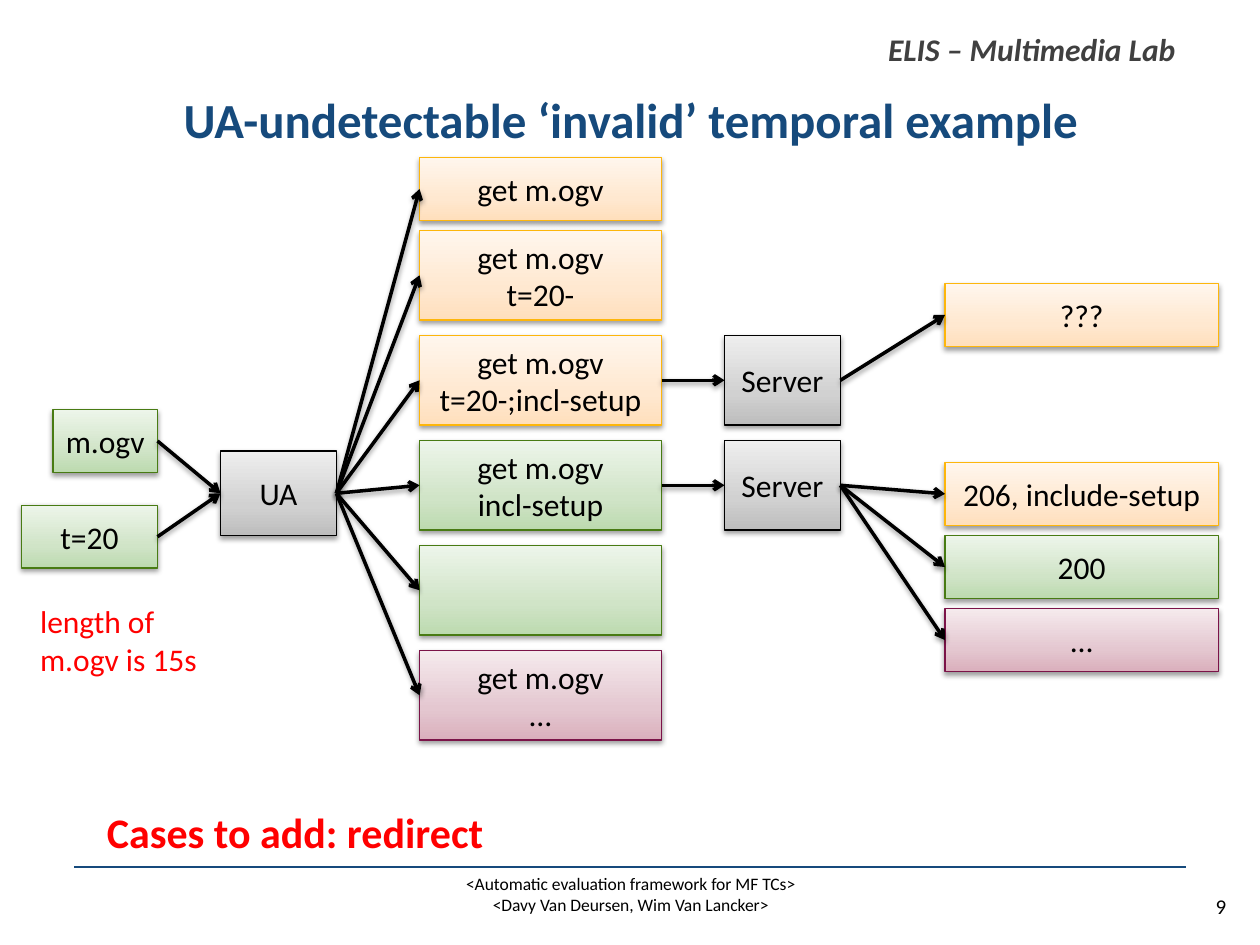
from copy import deepcopy

from lxml.etree import SubElement
from pptx import Presentation
from pptx.dml.color import RGBColor
from pptx.enum.shapes import MSO_CONNECTOR, MSO_SHAPE
from pptx.enum.text import MSO_ANCHOR, PP_ALIGN
from pptx.oxml.ns import qn
from pptx.util import Inches, Pt

BLACK = RGBColor(0x00, 0x00, 0x00)
BLUE = RGBColor(0x16, 0x4A, 0x7C)
GRAY = RGBColor(0x40, 0x40, 0x40)
RED = RGBColor(0xFF, 0x00, 0x00)

STOPS = (0, 0.35, 1)
STYLES = {
    "neutral": (BLACK, (RGBColor(0xBD, 0xBD, 0xBD), RGBColor(0xD1, 0xD1, 0xD1), RGBColor(0xEE, 0xEE, 0xEE))),
    "orange": (RGBColor(0xFD, 0xB6, 0x0C),
               (RGBColor(0xFF, 0xDF, 0xBC), RGBColor(0xFF, 0xE8, 0xD0), RGBColor(0xFF, 0xF6, 0xED))),
    "green": (RGBColor(0x48, 0x7B, 0x13),
              (RGBColor(0xBC, 0xDA, 0xAF), RGBColor(0xD0, 0xE4, 0xC7), RGBColor(0xED, 0xF5, 0xEA))),
    "purple": (RGBColor(0x7B, 0x13, 0x48),
               (RGBColor(0xDA, 0xAF, 0xBC), RGBColor(0xE4, 0xC7, 0xD0), RGBColor(0xF5, 0xEA, 0xED))),
}

LABELS = [
    ("9", (9.38, 7.04, 0.62, 0.3), 12, BLACK, PP_ALIGN.CENTER, False, False),
    ("ELIS – Multimedia Lab", (6.95, 0.19, 2.5, 0.4), 18, GRAY, PP_ALIGN.JUSTIFY, True, True),
    ("<Automatic evaluation framework for MF TCs>\n<Davy Van Deursen, Wim Van Lancker>",
     (0.59, 6.88, 8.83, 0.61), 10, BLACK, PP_ALIGN.CENTER, False, False),
    ("UA-undetectable ‘invalid’ temporal example",
     (0.55, 0.58, 8.91, 0.73), 28, BLUE, PP_ALIGN.CENTER, True, False),
    ("Cases to add: redirect", (0.75, 6.35, 7.71, 0.5), 24, RED, PP_ALIGN.LEFT, True, False),
    ("length of m.ogv is 15s", (0.22, 4.73, 1.5, 0.71), 18, RED, PP_ALIGN.LEFT, False, False),
]

LOW, HIGH = 0.5, 0.71
REQUEST_X, REQUEST_W = 3.33, 1.92
REQUEST_TOP, REQUEST_PITCH = 1.83, 2.5 / 3
SERVER_X, SERVER_W = 5.75, 0.92
RESPONSE_X, RESPONSE_W = 7.5, 2.17
RESPONSE_TOP, RESPONSE_PITCH = 3.67, 0.58

INPUTS = [("m.ogv", 0.42, 3.25, 0.83), ("t=20", 0.17, 4.01, 1.08)]
REQUESTS = [
    ("get m.ogv\nt=20-", "orange"),
    ("get m.ogv\nt=20-;incl-setup", "orange"),
    ("get m.ogv\nincl-setup", "green"),
    ("", "green"),
    ("get m.ogv\n…", "purple"),
]
RESPONSES = [("206, include-setup", "orange"), ("200", "green"), ("…", "purple")]

prs = Presentation()
prs.slide_width, prs.slide_height = Inches(10), Inches(7.5)
s = prs.slides.add_slide(prs.slide_layouts[6])


def write(tf, text, size, color, align, bold=False, italic=False):
    tf.text = text
    tf.vertical_anchor = MSO_ANCHOR.MIDDLE
    for p in tf.paragraphs:
        p.alignment = align
        for r in p.runs:
            r.font.name, r.font.size = "Calibri", Pt(size)
            r.font.bold, r.font.italic = bold, italic
            r.font.color.rgb = color


def add_shadow(shape):
    effects = SubElement(shape._element.spPr, qn("a:effectLst"))
    shadow = SubElement(effects, qn("a:outerShdw"), blurRad=str(Pt(3.1)), dist=str(Pt(1.6)),
                        dir="5400000", rotWithShape="0")
    color = SubElement(shadow, qn("a:srgbClr"), val="000000")
    SubElement(color, qn("a:alpha"), val="38000")


def add_box(text, style, x, y, w, h):
    sp = s.shapes.add_shape(MSO_SHAPE.RECTANGLE, Inches(x), Inches(y), Inches(w), Inches(h))
    border, shades = STYLES[style]
    sp.fill.gradient()
    sp.fill.gradient_angle = 90
    stop_list = sp._element.spPr.find(".//" + qn("a:gsLst"))
    stop_list.append(deepcopy(stop_list[0]))
    for stop, position, shade in zip(sp.fill.gradient_stops, STOPS, shades):
        stop.position = position
        stop.color.rgb = shade
    sp.line.color.rgb, sp.line.width = border, Pt(0.75)
    add_shadow(sp)
    if text:
        write(sp.text_frame, text, 18, BLACK, PP_ALIGN.CENTER)
    return sp


def add_arrow(start, end):
    c = s.shapes.add_connector(MSO_CONNECTOR.STRAIGHT, 0, 0, 0, 0)
    c.begin_connect(start, 3)
    c.end_connect(end, 1)
    c.line.color.rgb, c.line.width = BLACK, Pt(2)
    SubElement(c.line._get_or_add_ln(), qn("a:tailEnd"), type="arrow")
    add_shadow(c)


rule = s.shapes.add_connector(MSO_CONNECTOR.STRAIGHT, Inches(0.59), Inches(6.88), Inches(9.41), Inches(6.88))
rule.line.color.rgb, rule.line.width = BLUE, Pt(1.5)
SubElement(rule._element.spPr, qn("a:effectLst"))

for text, place, size, color, align, bold, italic in LABELS:
    tf = s.shapes.add_textbox(*map(Inches, place)).text_frame
    tf.word_wrap = align != PP_ALIGN.JUSTIFY
    write(tf, text, size, color, align, bold, italic)
    if size != 28:
        tf.vertical_anchor = MSO_ANCHOR.TOP

agent = add_box("UA", "neutral", 1.75, 3.58, 0.92, 0.67)
inputs = [add_box(text, "green", x, y, w, LOW) for text, x, y, w in INPUTS]
requests = [add_box("get m.ogv", "orange", REQUEST_X, 1.25, REQUEST_W, LOW)]
requests += [add_box(text, style, REQUEST_X, REQUEST_TOP + i * REQUEST_PITCH, REQUEST_W, HIGH)
             for i, (text, style) in enumerate(REQUESTS)]
servers = [add_box("Server", "neutral", SERVER_X, REQUEST_TOP + i * REQUEST_PITCH, SERVER_W, HIGH)
           for i in (1, 2)]
unknown = add_box("???", "orange", RESPONSE_X, 2.25, RESPONSE_W, LOW)
responses = [add_box(text, style, RESPONSE_X, RESPONSE_TOP + i * RESPONSE_PITCH, RESPONSE_W, LOW)
             for i, (text, style) in enumerate(RESPONSES)]

arrows = [(source, agent) for source in inputs]
arrows += [(agent, request) for request in requests]
arrows += list(zip(requests[2:4], servers))
arrows += [(servers[0], unknown)]
arrows += [(servers[1], response) for response in responses]
for start, end in arrows:
    add_arrow(start, end)

prs.save("out.pptx")
